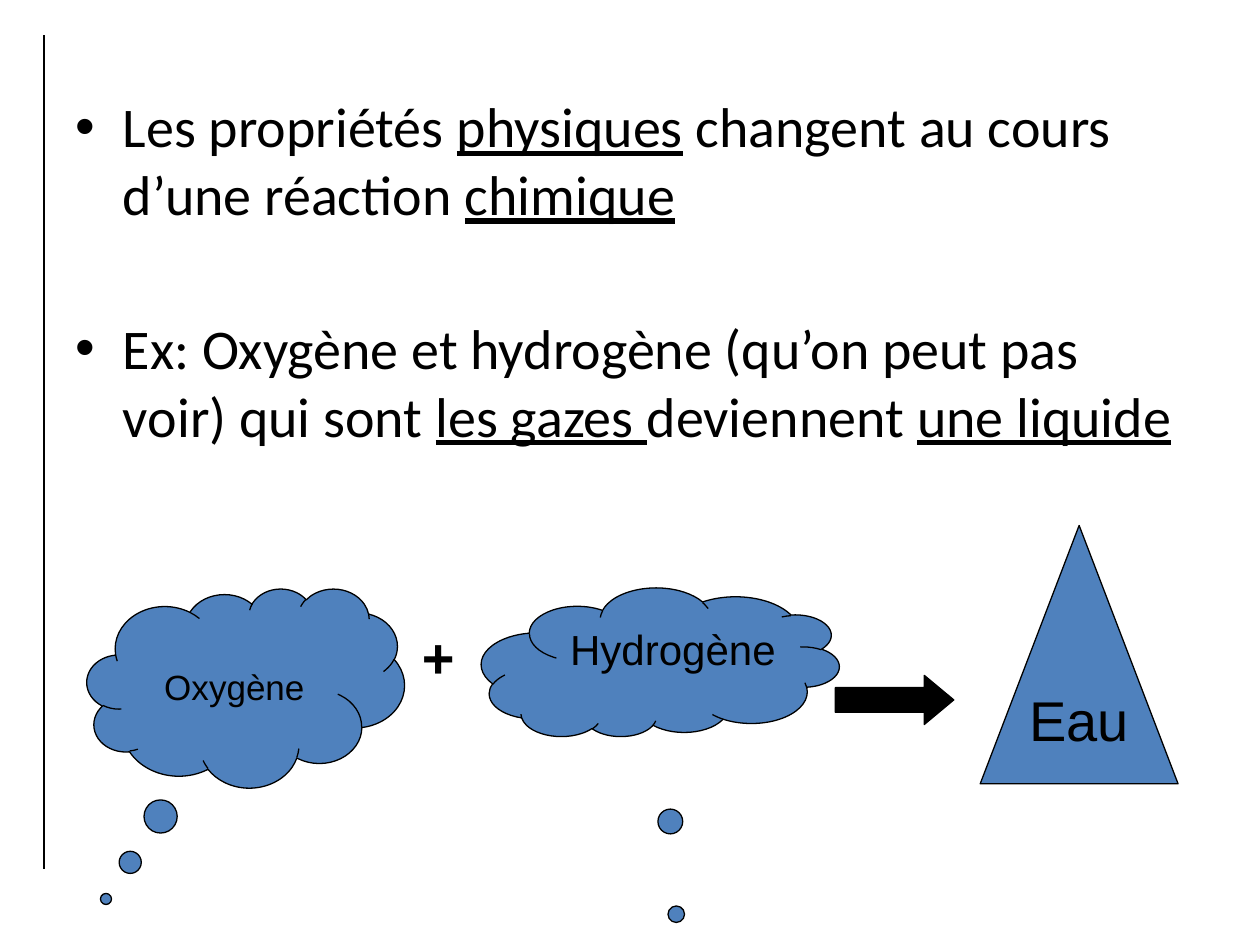
from pptx import Presentation
from pptx.dml.color import RGBColor
from pptx.enum.shapes import MSO_CONNECTOR, MSO_SHAPE
from pptx.enum.text import MSO_ANCHOR, PP_ALIGN
from pptx.oxml.ns import qn
from pptx.util import Inches, Pt
from lxml import etree

BLACK = RGBColor(0x00, 0x00, 0x00)
BLUE = RGBColor(0x4F, 0x81, 0xBD)
CLOUD = MSO_SHAPE.CLOUD_CALLOUT
ARROW = MSO_SHAPE.RIGHT_ARROW
TRIANGLE = MSO_SHAPE.ISOSCELES_TRIANGLE
STRAIGHT = MSO_CONNECTOR.STRAIGHT
CENTER = PP_ALIGN.CENTER
TOP = MSO_ANCHOR.TOP
MIDDLE = MSO_ANCHOR.MIDDLE

BULLETS = [
    [("Les propriétés ", False), ("physiques", True),
     (" changent au cours d’une réaction ", False), ("chimique", True)],
    [("Ex: Oxygène et hydrogène (qu’on peut pas voir) qui sont ", False),
     ("les gazes ", True), ("deviennent ", False), ("une liquide", True)],
]


def place(shape, left, top, width, height):
    shape.left, shape.top = Inches(left), Inches(top)
    shape.width, shape.height = Inches(width), Inches(height)


def format_font(font, name, size):
    font.name = name
    font.size = Pt(size)
    font.color.rgb = BLACK


def fill_body(body):
    text_frame = body.text_frame
    for index, parts in enumerate(BULLETS):
        paragraph = text_frame.add_paragraph() if index else text_frame.paragraphs[0]
        if index:
            paragraph.space_before = Pt(50)
        for text, underlined in parts:
            run = paragraph.add_run()
            run.text = text
            format_font(run.font, "Calibri", 32)
            run.font.underline = underlined


def add_margin_line(slide, left, top, bottom):
    line = slide.shapes.add_connector(
        STRAIGHT, Inches(left), Inches(top), Inches(left), Inches(bottom))
    line.line.color.rgb = BLACK
    line.line.width = Pt(0.75)
    etree.SubElement(line._element.spPr, qn("a:effectLst"))


def add_figure(slide, kind, box, fill, adjustments):
    shape = slide.shapes.add_shape(kind, *map(Inches, box))
    shape.shadow.inherit = False
    for index, value in enumerate(adjustments):
        shape.adjustments[index] = value
    shape.fill.solid()
    shape.fill.fore_color.rgb = fill
    shape.line.color.rgb = BLACK
    shape.line.width = Pt(0.75)
    return shape


def add_label(shape, text, size, anchor=TOP, wrap=True):
    text_frame = shape.text_frame
    text_frame.text = text
    text_frame.word_wrap = wrap
    text_frame.vertical_anchor = anchor
    paragraph = text_frame.paragraphs[0]
    paragraph.alignment = CENTER
    format_font(paragraph.runs[0].font, "Arial", size)


def flip_with_upright_text(shape):
    transform = shape._element.spPr.find(qn("a:xfrm"))
    transform.set("flipH", "1")
    transform.set("flipV", "1")
    shape.text_frame._txBody.bodyPr.set("rot", "10800000")


def add_plus(slide):
    text_box = slide.shapes.add_textbox(*map(Inches, (3.25, 4.89, 0.47, 0.63)))
    text_frame = text_box.text_frame
    text_frame.word_wrap = True
    text_frame.text = "+"
    paragraph = text_frame.paragraphs[0]
    paragraph.space_before = Pt(16)
    font = paragraph.runs[0].font
    format_font(font, "Arial", 32)
    font.bold = True


def main():
    presentation = Presentation()
    presentation.slide_width = Inches(10)
    presentation.slide_height = Inches(7.5)
    slide = presentation.slides.add_slide(presentation.slide_layouts[1])
    title = slide.shapes.title._element
    title.getparent().remove(title)

    body = slide.placeholders[1]
    place(body, 0.5, 0.68, 9, 6.02)
    fill_body(body)
    add_margin_line(slide, 0.35, 0.28, 6.9)

    oxygen = add_figure(slide, CLOUD, (0.69, 4.67, 2.52, 1.58), BLUE, (-0.44, 1.06))
    add_label(oxygen, "Oxygène", 20)
    oxygen.text_frame.margin_top = Inches(0.37)

    hydrogen = add_figure(slide, CLOUD, (3.82, 4.67, 2.84, 1.18), BLUE, (-0.06, -2.26))
    add_label(hydrogen, "Hydrogène", 24)
    flip_with_upright_text(hydrogen)

    add_plus(slide)
    add_figure(slide, ARROW, (6.63, 5.36, 0.94, 0.39), BLACK, (0.5, 0.6))
    water = add_figure(slide, TRIANGLE, (7.78, 4.17, 1.57, 2.05), BLUE, (0.5,))
    add_label(water, "Eau", 32, MIDDLE, wrap=False)

    presentation.save("out.pptx")


if __name__ == "__main__":
    main()
